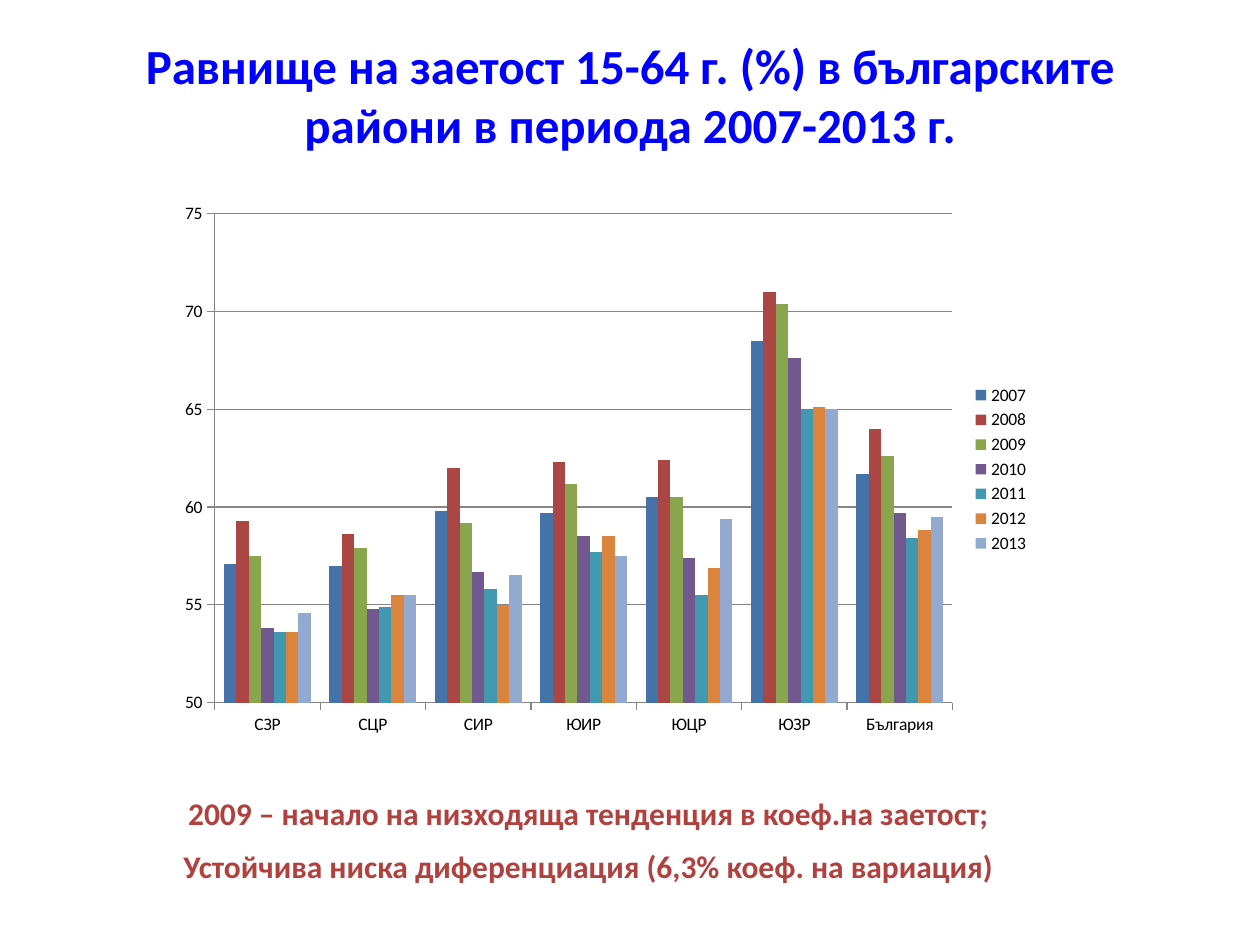
from pptx import Presentation
from pptx.chart.data import CategoryChartData
from pptx.dml.color import RGBColor
from pptx.enum.chart import XL_CHART_TYPE, XL_LEGEND_POSITION, XL_TICK_MARK
from pptx.enum.text import MSO_ANCHOR, PP_ALIGN
from pptx.util import Inches, Pt

COLUMN = XL_CHART_TYPE.COLUMN_CLUSTERED
RIGHT = XL_LEGEND_POSITION.RIGHT
TICK_OUT, TICK_NONE = XL_TICK_MARK.OUTSIDE, XL_TICK_MARK.NONE
TOP, MIDDLE = MSO_ANCHOR.TOP, MSO_ANCHOR.MIDDLE
CENTER = PP_ALIGN.CENTER

FONT = "Calibri"
WIDE, HIGH = 10, 7.5
BLUE, RED, BLACK, GRAY = "0000FF", "B0413E", "000000", "868686"

TITLE = "Равнище на заетост 15-64 г. (%) в българските райони в периода 2007-2013 г."
NOTES = [
    "2009 – начало на низходяща тенденция в коеф.на заетост;",
    "Устойчива ниска диференциация (6,3% коеф. на вариация)",
]
AREAS = ["СЗР", "СЦР", "СИР", "ЮИР", "ЮЦР", "ЮЗР", "България"]
# Year: bar colour, employment rate by area
RATES = {
    "2007": ("4572A7", [57.1, 57, 59.8, 59.7, 60.5, 68.5, 61.7]),
    "2008": ("AA4643", [59.3, 58.6, 62, 62.3, 62.4, 71, 64]),
    "2009": ("89A54E", [57.5, 57.9, 59.2, 61.2, 60.5, 70.4, 62.6]),
    "2010": ("71588F", [53.8, 54.8, 56.7, 58.5, 57.4, 67.6, 59.7]),
    "2011": ("4198AF", [53.6, 54.9, 55.8, 57.7, 55.5, 65, 58.4]),
    "2012": ("DB843D", [53.6, 55.5, 55, 58.5, 56.9, 65.1, 58.8]),
    "2013": ("93A9CF", [54.6, 55.5, 56.5, 57.5, 59.4, 65, 59.5]),
}


def color(code):
    return RGBColor.from_string(code)


def style(font, size, code, bold=False):
    font.name, font.size, font.bold = FONT, Pt(size), bold
    font.color.rgb = color(code)


def rule(line):
    line.color.rgb = color(GRAY)
    line.width = Pt(0.75)


def add_text(slide, box, lines, size, code, anchor=TOP, gap=0):
    """Centred bold lines inside the box."""
    frame = slide.shapes.add_textbox(*box).text_frame
    frame.word_wrap = True
    frame.vertical_anchor = anchor
    frame.text = "\n".join(lines)
    for para in frame.paragraphs:
        para.alignment = CENTER
        para.space_before = Pt(gap)
        style(para.font, size, code, bold=True)


def add_rates(slide, box):
    """Clustered columns: one group per area, one bar per year."""
    data = CategoryChartData(number_format="General")
    data.categories = AREAS
    for year, (_, rates) in RATES.items():
        data.add_series(year, rates)
    chart = slide.shapes.add_chart(COLUMN, *box, data).chart
    chart.has_title = False
    style(chart.font, 10, BLACK)

    # Bars
    plot = chart.plots[0]
    plot.gap_width, plot.overlap = 150, 0
    plot.vary_by_categories = False
    for bars, (code, _) in zip(plot.series, RATES.values()):
        bars.invert_if_negative = False
        bars.format.fill.solid()
        bars.format.fill.fore_color.rgb = color(code)

    # Axes and grid
    for axis in (chart.category_axis, chart.value_axis):
        axis.major_tick_mark, axis.minor_tick_mark = TICK_OUT, TICK_NONE
        rule(axis.format.line)
    scale = chart.value_axis
    scale.minimum_scale, scale.maximum_scale, scale.major_unit = 50, 75, 5
    scale.has_major_gridlines = True
    rule(scale.major_gridlines.format.line)

    # Legend
    chart.has_legend = True
    chart.legend.position = RIGHT
    chart.legend.include_in_layout = False


def share(left, top, width, height):
    """Box from shares of the slide's size, in percent."""
    return [Inches(part * side / 100) for part, side in
            zip((left, top, width, height), (WIDE, HIGH, WIDE, HIGH))]


def main():
    deck = Presentation()
    deck.slide_width, deck.slide_height = Inches(WIDE), Inches(HIGH)
    slide = deck.slides.add_slide(deck.slide_layouts[6])
    add_text(slide, share(5, 3.33, 90, 13.33), [TITLE], 28, BLUE, MIDDLE)
    add_text(slide, share(6.7, 83.33, 80, 11.33), NOTES, 18, RED, gap=9)
    add_rates(slide, share(13.3, 20.4, 69.4, 58.53))
    deck.save("out.pptx")


if __name__ == "__main__":
    main()
